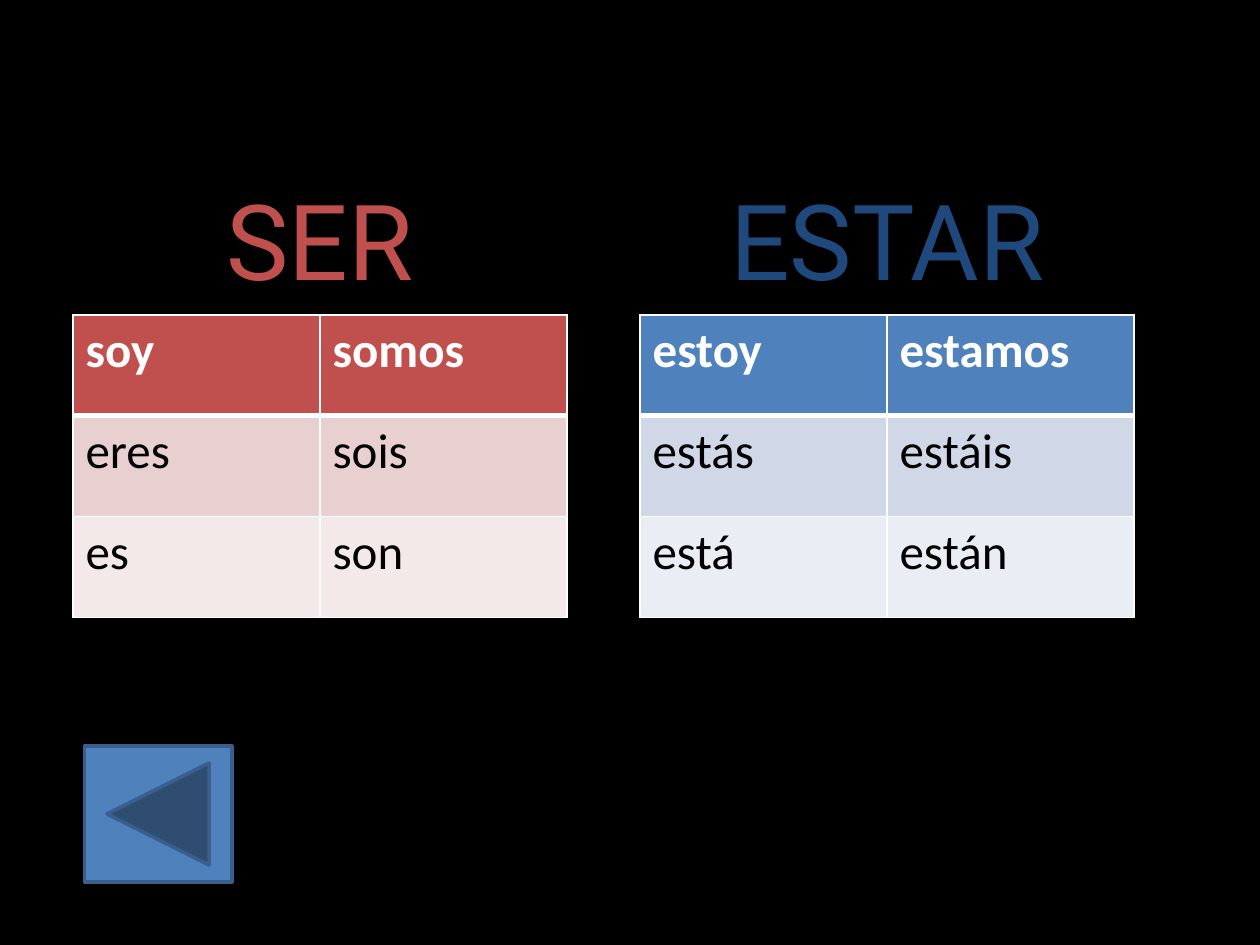
from lxml import etree
from pptx import Presentation, util as u
from pptx.dml.color import RGBColor
from pptx.enum import shapes, text
from pptx.oxml import ns

WIDTH, HEIGHT = 10, 7.5
PANEL_STEP = 4.5
TITLE_LEFT, TABLE_LEFT = 0.5, 0.58
COLUMN, ROW = 1.96, 0.8
VERBS = [
    ("SER", "C0504D", ["C0504D", "E8D0D0", "F4E9E9"],
     [("soy", "somos"), ("eres", "sois"), ("es", "son")]),
    ("ESTAR", "1F497D", ["4F81BD", "D0D8E8", "E9EDF4"],
     [("estoy", "estamos"), ("estás", "estáis"), ("está", "están")]),
]


def color(value):
    """Turn a hex string into a colour."""
    return RGBColor.from_string(value)


def paint(area, value):
    """Give a fill one solid colour."""
    area.solid()
    area.fore_color.rgb = color(value)


def write(frame, words, ink, **font_format):
    """Write one formatted run and return its paragraph."""
    paragraph = frame.paragraphs[0]
    run = paragraph.add_run()
    run.text = words
    run.font.color.rgb = color(ink)
    for name, value in font_format.items():
        setattr(run.font, name, value)
    return paragraph


def place(shape, *box):
    """Move a shape to a box in inches."""
    for name, length in zip(("left", "top", "width", "height"), box):
        setattr(shape, name, u.Inches(length))


def add_heading(shape, verb, ink, left):
    """Place and write the heading of one verb."""
    place(shape, left, HEIGHT / 6, 4.08, 1.28)
    frame = shape.text_frame
    layout = {"word_wrap": True, "auto_size": text.MSO_AUTO_SIZE.NONE,
              "vertical_anchor": text.MSO_ANCHOR.MIDDLE}
    for name, value in layout.items():
        setattr(frame, name, value)
    heading = write(frame, verb, ink, size=u.Pt(60), name="Roboto")
    heading.alignment = text.PP_ALIGN.CENTER


def add_borders(cell, row):
    """Draw white cell borders, thick below the header row."""
    widths = {"L": 1, "R": 1, "T": 3 if row == 1 else 1, "B": 3 if row == 0 else 1}
    properties = cell._tc.get_or_add_tcPr()
    for side, width in widths.items():
        line = etree.SubElement(properties, ns.qn(f"a:ln{side}"), w=str(u.Pt(width)))
        solid = etree.SubElement(line, ns.qn("a:solidFill"))
        etree.SubElement(solid, ns.qn("a:srgbClr"), val="FFFFFF")


def add_conjugation(slide, forms, fills, left):
    """Add the table of forms of one verb."""
    size = len(forms), len(forms[0])
    box = left, HEIGHT / 3, COLUMN * size[1], ROW * size[0]
    table = slide.shapes.add_table(*size, *map(u.Inches, box)).table
    for row, (pair, fill) in enumerate(zip(forms, fills)):
        header = row == 0
        for column, form in enumerate(pair):
            cell = table.cell(row, column)
            add_borders(cell, row)
            paint(cell.fill, fill)
            write(cell.text_frame, form, "FFFFFF" if header else "000000",
                  size=u.Pt(28), name="Calibri", bold=header)


def add_back_button(slide):
    """Add the button that points back."""
    box = map(u.Inches, (0.67, 5.92, 1.17, 1.08))
    button = slide.shapes.add_shape(
        shapes.MSO_SHAPE.ACTION_BUTTON_BACK_OR_PREVIOUS, *box)
    button.shadow.inherit = False
    paint(button.fill, "4F81BD")
    paint(button.line.fill, "3A5F8C")
    button.line.width = u.Pt(2)


def main():
    """Build the slide and save it."""
    deck = Presentation()
    deck.slide_width, deck.slide_height = u.Inches(WIDTH), u.Inches(HEIGHT)
    slide = deck.slides.add_slide(deck.slide_layouts.get_by_name("Title Only"))
    paint(slide.background.fill, "000000")
    headings = slide.shapes.title, slide.shapes.add_textbox(0, 0, 0, 0)
    for panel, (heading, (verb, ink, fills, forms)) in enumerate(zip(headings, VERBS)):
        shift = panel * PANEL_STEP
        add_heading(heading, verb, ink, TITLE_LEFT + shift)
        add_conjugation(slide, forms, fills, TABLE_LEFT + shift)
    add_back_button(slide)
    deck.save("out.pptx")


if __name__ == "__main__":
    main()
